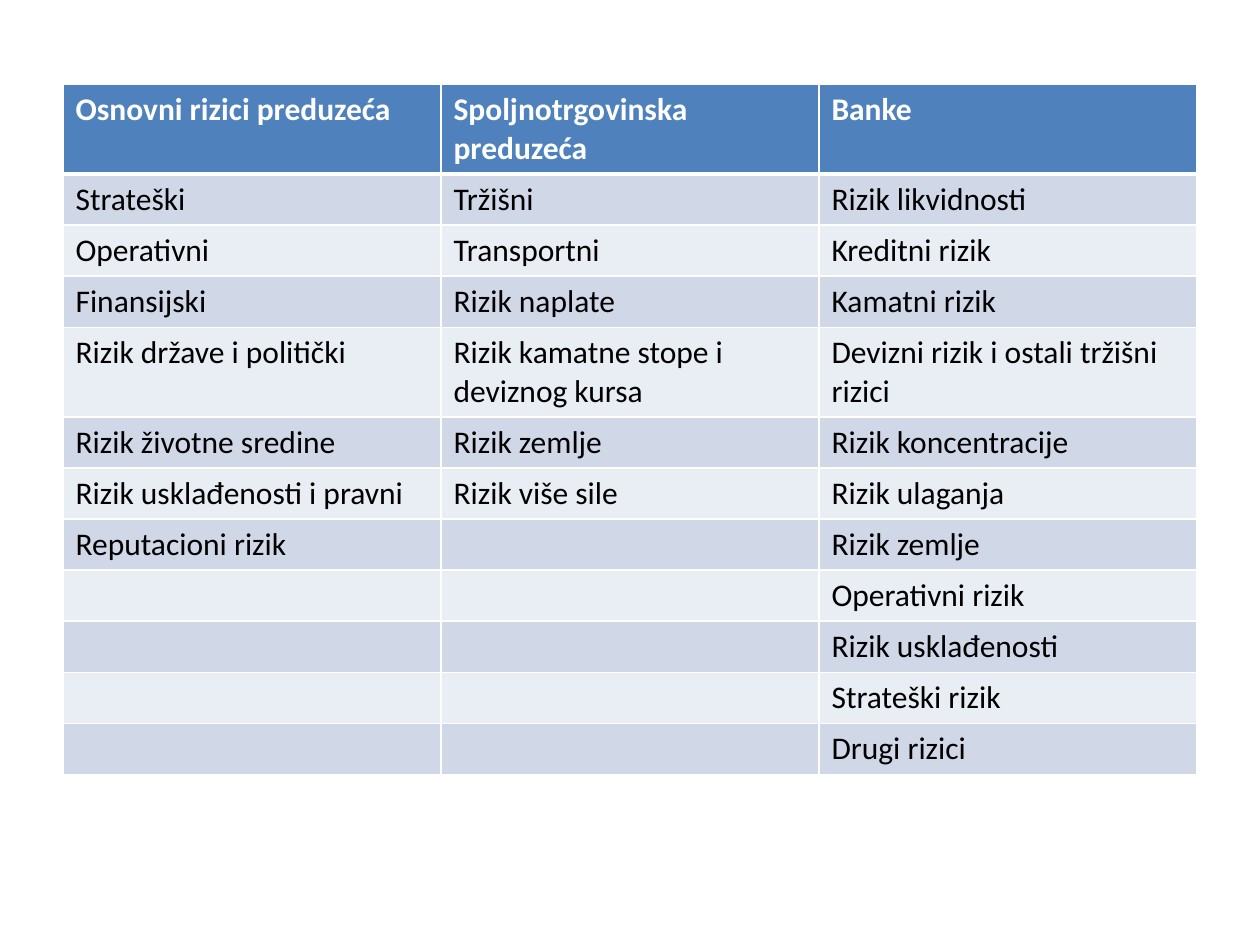
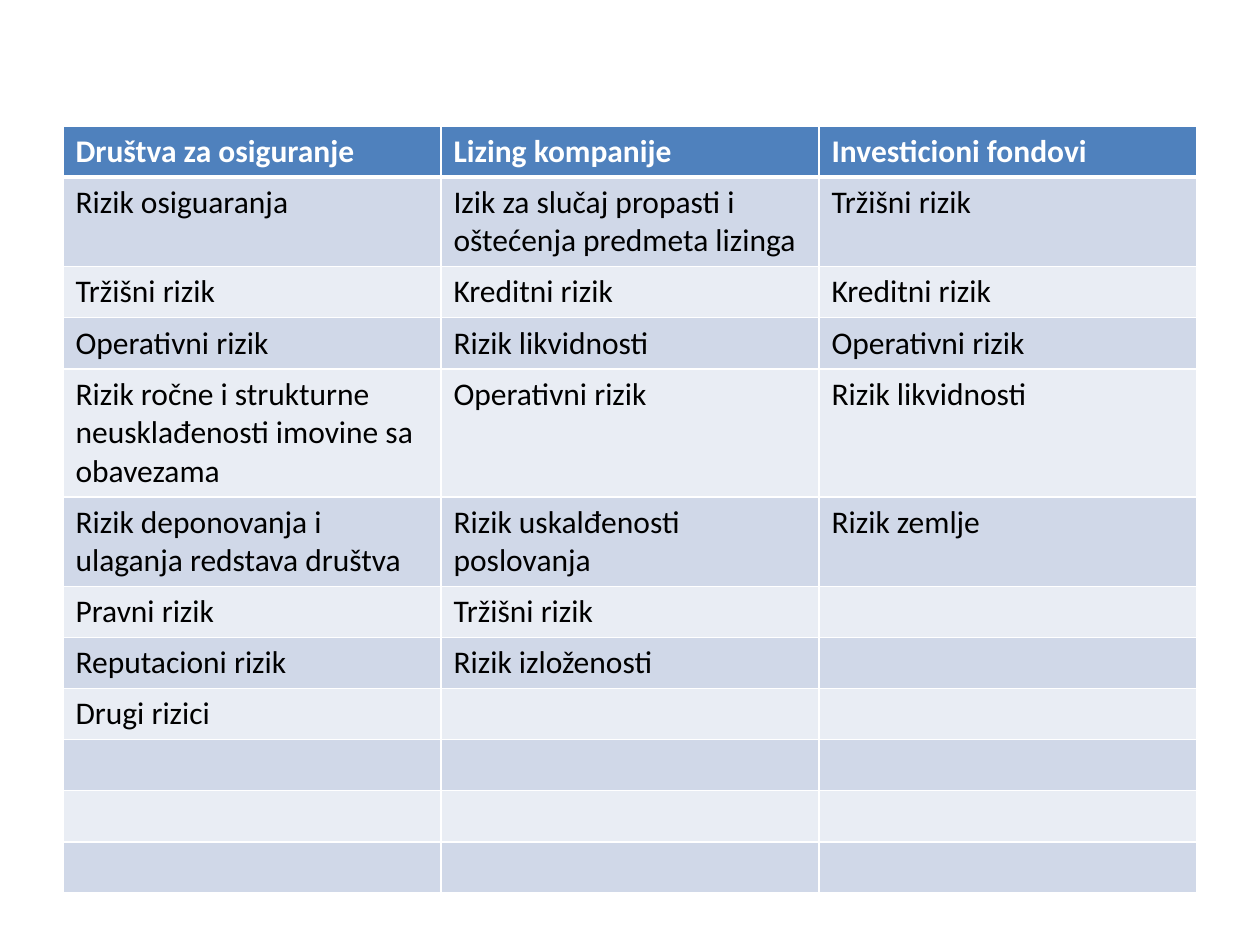
from dataclasses import dataclass
from itertools import zip_longest

from lxml.etree import SubElement
from pptx import Presentation
from pptx.dml.color import RGBColor as Rgb
from pptx.oxml.ns import qn
from pptx.util import Inches, Pt


@dataclass(frozen=True)
class Theme:
    font: str = "Calibri"
    size: int = 18
    header_fill: str = "4F81BD"
    header_text: str = "FFFFFF"
    body_text: str = "000000"
    bands: tuple = ("D0D8E8", "E9EDF4")
    border: str = "FFFFFF"
    thin: int = 1
    thick: int = 3


THEME = Theme()
BLANK_LAYOUT = 6
LEFT, COLUMN_WIDTH = 0.5, 3
ROW_COUNT, ROW_HEIGHT = 12, 0.4

COMPANY_AND_BANK_RISKS = {
    "Osnovni rizici preduzeća": [
        "Strateški", "Operativni", "Finansijski", "Rizik države i politički",
        "Rizik životne sredine", "Rizik usklađenosti i pravni",
        "Reputacioni rizik",
    ],
    "Spoljnotrgovinska preduzeća": [
        "Tržišni", "Transportni", "Rizik naplate",
        "Rizik kamatne stope i deviznog kursa", "Rizik zemlje",
        "Rizik više sile",
    ],
    "Banke": [
        "Rizik likvidnosti", "Kreditni rizik", "Kamatni rizik",
        "Devizni rizik i ostali tržišni rizici", "Rizik koncentracije",
        "Rizik ulaganja", "Rizik zemlje", "Operativni rizik",
        "Rizik usklađenosti", "Strateški rizik", "Drugi rizici",
    ],
}

OTHER_INSTITUTION_RISKS = {
    "Društva za osiguranje": [
        "Rizik osiguaranja", "Tržišni rizik", "Operativni rizik",
        "Rizik ročne i strukturne neusklađenosti imovine sa obavezama",
        "Rizik deponovanja i ulaganja redstava društva", "Pravni rizik",
        "Reputacioni rizik", "Drugi rizici",
    ],
    "Lizing kompanije": [
        "Izik za slučaj propasti i oštećenja predmeta lizinga",
        "Kreditni rizik", "Rizik likvidnosti", "Operativni rizik",
        "Rizik uskalđenosti poslovanja", "Tržišni rizik", "Rizik izloženosti",
    ],
    "Investicioni fondovi": [
        "Tržišni rizik", "Kreditni rizik", "Operativni rizik",
        "Rizik likvidnosti", "Rizik zemlje",
    ],
}


def set_borders(cell, top, bottom):
    """Draw the four cell borders; top and bottom are widths in points."""
    properties = cell._tc.get_or_add_tcPr()
    widths = {"lnL": THEME.thin, "lnR": THEME.thin, "lnT": top, "lnB": bottom}
    for side, width in widths.items():
        line = SubElement(properties, qn(f"a:{side}"), w=str(Pt(width)))
        fill = SubElement(line, qn("a:solidFill"))
        SubElement(fill, qn("a:srgbClr"), val=THEME.border)


def write_text(cell, text, color, bold=False):
    span = cell.text_frame.paragraphs[0].add_run()
    span.text = text
    span.font.name = THEME.font
    span.font.size = Pt(THEME.size)
    span.font.bold = bold
    span.font.color.rgb = Rgb.from_string(color)


def format_cell(cell, text, row):
    """Style a cell as header (row 0) or as part of a banded body row."""
    header = row == 0
    set_borders(cell,
                top=THEME.thick if row == 1 else THEME.thin,
                bottom=THEME.thick if header else THEME.thin)
    fill = THEME.header_fill if header else THEME.bands[(row - 1) % 2]
    cell.fill.solid()
    cell.fill.fore_color.rgb = Rgb.from_string(fill)
    if text:
        color = THEME.header_text if header else THEME.body_text
        write_text(cell, text, color, bold=header)


def add_risk_table(page, risks, top):
    """Add one column per institution; rows grow to fit wrapped text."""
    table = page.shapes.add_table(
        ROW_COUNT, len(risks), Inches(LEFT), Inches(top),
        Inches(COLUMN_WIDTH * len(risks)), Inches(ROW_HEIGHT * ROW_COUNT),
    ).table
    table.horz_banding = False
    columns = [[institution, *names] for institution, names in risks.items()]
    rows = zip_longest(range(ROW_COUNT), *columns, fillvalue="")
    for row, *texts in rows:
        for column, text in enumerate(texts):
            format_cell(table.cell(row, column), text, row)


def main():
    deck = Presentation()
    deck.slide_width, deck.slide_height = Inches(10), Inches(7.5)
    tables = ((COMPANY_AND_BANK_RISKS, 0.67), (OTHER_INSTITUTION_RISKS, 1))
    for risks, top in tables:
        page = deck.slides.add_slide(deck.slide_layouts[BLANK_LAYOUT])
        add_risk_table(page, risks, top)
    deck.save("out.pptx")


if __name__ == "__main__":
    main()
